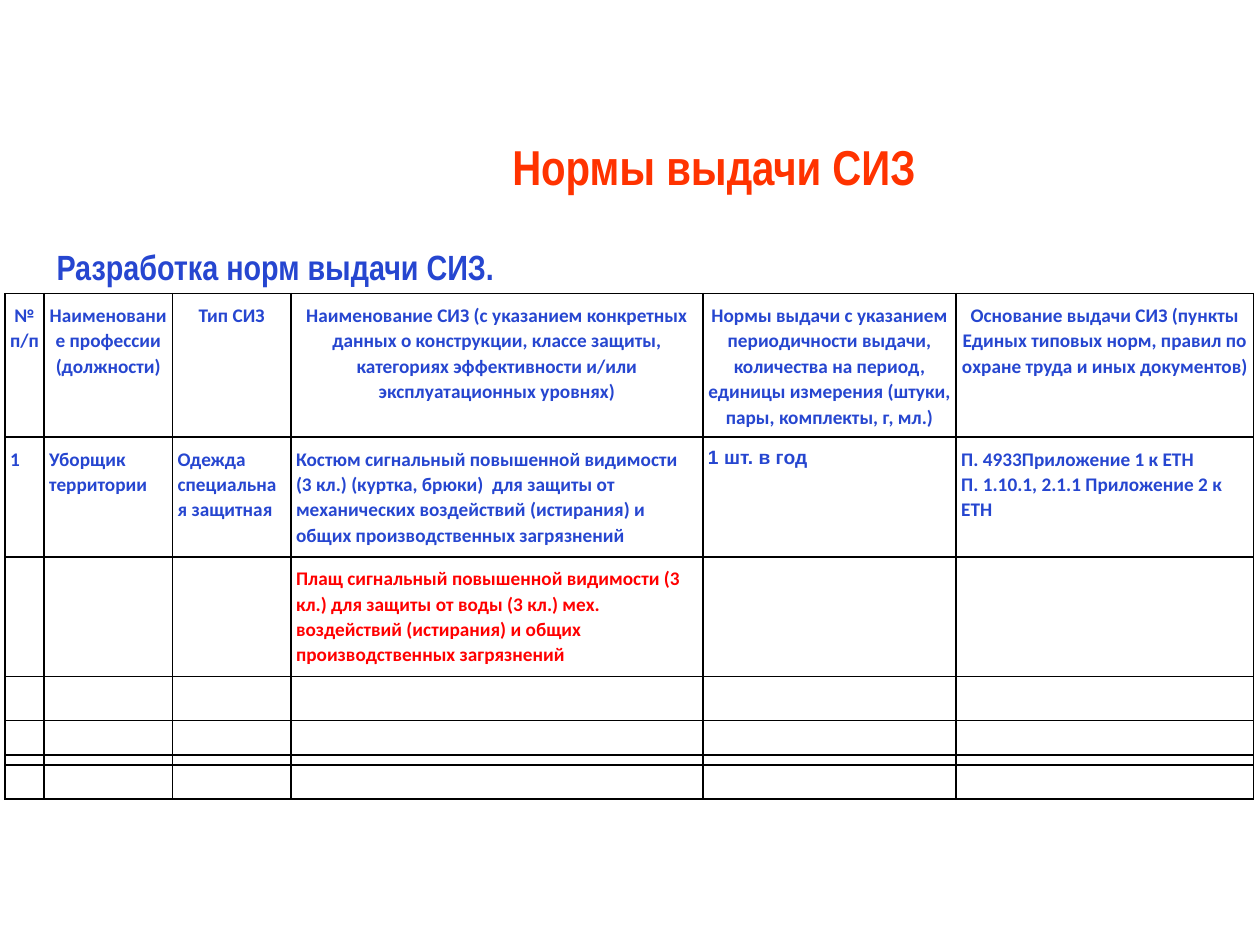
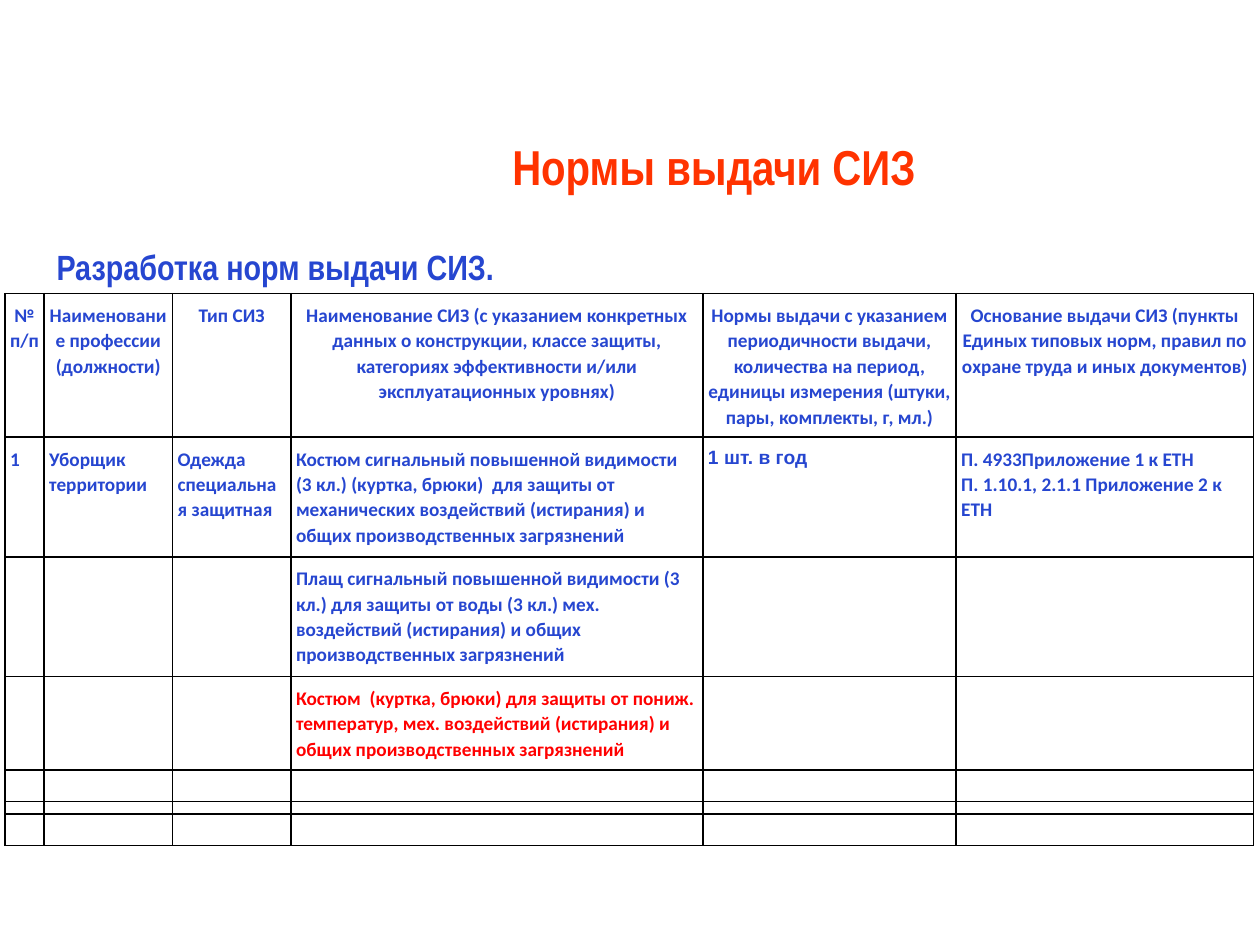
from lxml.etree import SubElement
from pptx import Presentation
from pptx.dml.color import RGBColor as Rgb
from pptx.enum.text import MSO_ANCHOR as Anchor, PP_ALIGN as Align
from pptx.oxml import parse_xml
from pptx.oxml.ns import nsdecls, qn
from pptx.util import Inches, Pt

# Content
TITLE = "Нормы выдачи СИЗ"
TOPIC = "Разработка норм выдачи СИЗ."
HEAD = [
    "№ п/п",
    "Наименование профессии (должности)",
    "Тип СИЗ",
    "Наименование СИЗ (с указанием конкретных данных о конструкции, классе "
    "защиты, категориях эффективности и/или эксплуатационных уровнях)",
    "Нормы выдачи с указанием периодичности выдачи, количества на период, "
    "единицы измерения (штуки, пары, комплекты, г, мл.)",
    "Основание выдачи СИЗ (пункты Единых типовых норм, правил по охране "
    "труда и иных документов)",
]
FIRST = [
    "1",
    "Уборщик территории",
    "Одежда специальная защитная",
    "Костюм сигнальный повышенной видимости (3 кл.) (куртка, брюки)  для "
    "защиты от механических воздействий (истирания) и общих "
    "производственных загрязнений",
    "1 шт. в год",
    "П. 4933Приложение 1 к ЕТН\nП. 1.10.1, 2.1.1 Приложение 2 к ЕТН",
]
CLOAK = ("Плащ сигнальный повышенной видимости (3 кл.) для защиты от воды "
         "(3 кл.) мех. воздействий (истирания) и общих производственных "
         "загрязнений")
WARM = ("Костюм  (куртка, брюки) для защиты от пониж. температур, мех. "
        "воздействий (истирания) и общих производственных загрязнений")
EMPTY = [""] * len(HEAD)

# Each slide: added items (the newest is red), row heights, top of the spare row
SLIDES = [
    ([CLOAK], [1.14, 0.95, 0.95, 0.35, 0.35], 5.99),
    ([CLOAK, WARM], [1.14, 0.95, 0.95, 0.74, 0.35], 6.36),
]

# Shared style
COLORS = {"title": "FF3300", "text": "2646D0", "new": "FF0000", "line": "000000"}
COLS = [0.31, 1.02, 0.94, 3.27, 2.01, 2.36]
ITEM, NORM = 3, 4
LEFT, TOP = 0.04, 2.33


def style(para, size, face, color):
    for run in para.runs:
        font = run.font
        font.size, font.name, font.bold = Pt(size), face, True
        font.color.rgb = Rgb.from_string(COLORS[color])


def label(slide, text, box, size, color):
    frame = slide.shapes.add_textbox(*map(Inches, box)).text_frame
    frame.word_wrap = True
    frame.text = text
    style(frame.paragraphs[0], size, "Arial Narrow", color)
    return frame


def border(cell):
    props = cell._tc.get_or_add_tcPr()
    for spot, side in enumerate("LRTB"):
        props.insert(spot, parse_xml(
            f'<a:ln{side} {nsdecls("a")} w="{Pt(1)}"><a:solidFill>'
            f'<a:srgbClr val="{COLORS["line"]}"/></a:solidFill></a:ln{side}>'))


def fill(cell, text, face, color, align):
    cell.margin_left = cell.margin_right = Inches(0.04)
    cell.margin_top = cell.margin_bottom = Inches(0.07)
    cell.fill.background()
    border(cell)
    cell.text_frame.text = text
    for para in cell.text_frame.paragraphs:
        para.alignment, para.line_spacing = align, 1.07
        style(para, 11, face, color)
        if not text:  # keeps an empty row low
            SubElement(para._p, qn("a:endParaRPr"), sz="1100")


def grid(slide, rows, highs, top, new=None):
    table = slide.shapes.add_table(
        len(rows), len(COLS), Inches(LEFT), Inches(top),
        Inches(sum(COLS)), Inches(sum(highs))).table
    table.first_row = table.horz_banding = False
    for col, wide in zip(table.columns, COLS):
        col.width = Inches(wide)
    for row, high, texts in zip(table.rows, highs, rows):
        row.height = Inches(high)
        for num, (cell, text) in enumerate(zip(row.cells, texts)):
            face = "Arial" if num == NORM and texts is FIRST else "Calibri"
            color = "new" if text and text == new else "text"
            align = Align.CENTER if texts is HEAD else Align.LEFT
            fill(cell, text, face, color, align)


def main():
    deck = Presentation()
    deck.slide_width, deck.slide_height = Inches(10), Inches(7.5)
    for items, highs, spare in SLIDES:
        slide = deck.slides.add_slide(deck.slide_layouts[6])

        # Title and topic
        head = label(slide, TITLE, (1.69, 0.69, 7.95, 1.25), 28, "title")
        head.vertical_anchor = Anchor.MIDDLE
        head.paragraphs[0].alignment = Align.CENTER
        topic = label(slide, TOPIC, (0.35, 1.94, 6.22, 0.55), 20, "text")
        topic.paragraphs[0].line_spacing = 0.9

        # Table of norms, then the spare row
        rows = [HEAD, FIRST]
        for item in items:
            rows.append(EMPTY[:ITEM] + [item] + EMPTY[ITEM + 1:])
        rows += [EMPTY] * (len(highs) - len(rows))
        grid(slide, rows, highs, TOP, items[-1])
        grid(slide, [EMPTY], [0.35], spare)
    deck.save("out.pptx")


if __name__ == "__main__":
    main()
